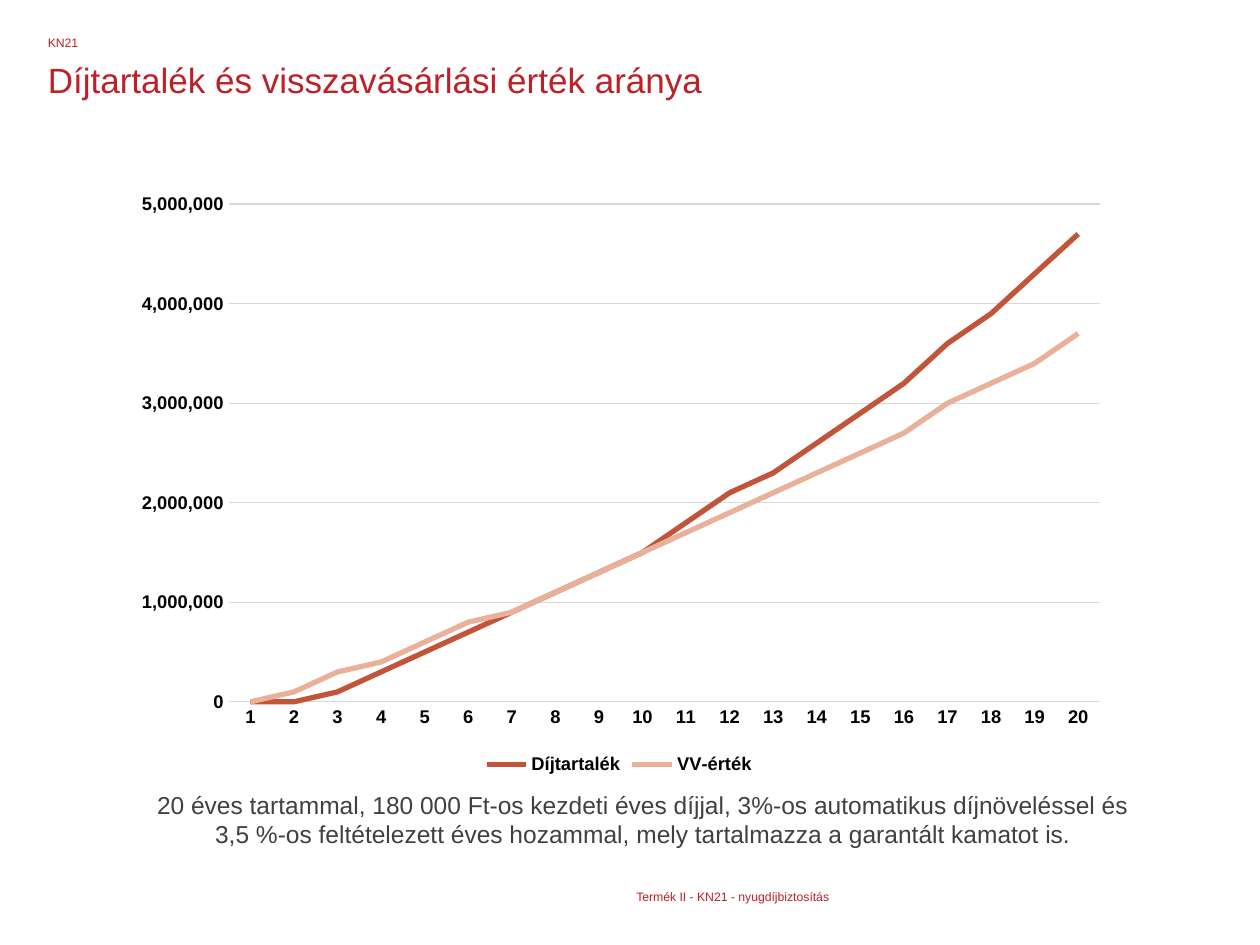
import pptx
import pptx.chart.data
import pptx.dml.color
import pptx.enum.chart
import pptx.enum.text
import pptx.oxml
import pptx.oxml.ns
import pptx.util

WIDTH, HEIGHT = 10, 7.5
MARGIN = 0.38
RED, GREY, BLACK, GRID = "BD2027", "404040", "000000", "D9D9D9"
FONT = "Arial"

# Thousands of forints at the end of each policy year
RESERVE = [0, 0, 100, 300, 500, 700, 900, 1100, 1300, 1500,
           1800, 2100, 2300, 2600, 2900, 3200, 3600, 3900, 4300, 4700]
SURRENDER = [0, 100, 300, 400, 600, 800, 900, 1100, 1300, 1500,
             1700, 1900, 2100, 2300, 2500, 2700, 3000, 3200, 3400, 3700]
SERIES = [("Díjtartalék", RESERVE, "C25439"), ("VV-érték", SURRENDER, "E9B09A")]


def color(hex_code):
    return pptx.dml.color.RGBColor.from_string(hex_code)


def style_font(font, size, hex_code, bold=False):
    font.name = FONT
    font.size = pptx.util.Pt(size)
    font.bold = bold
    font.color.rgb = color(hex_code)


def style_line(line, hex_code, width):
    line.color.rgb = color(hex_code)
    line.width = pptx.util.Pt(width)


def add_text(slide, box, lines, size, hex_code, centered=False,
             spacing=None, inset=(0, 0)):
    """Add a text box with one paragraph per line; spacing is in points."""
    frame = slide.shapes.add_textbox(*map(pptx.util.Inches, box)).text_frame
    frame.word_wrap = True
    frame.margin_left = frame.margin_right = pptx.util.Inches(inset[0])
    frame.margin_top = frame.margin_bottom = pptx.util.Inches(inset[1])
    frame.text = "\n".join(lines)
    for paragraph in frame.paragraphs:
        if centered:
            paragraph.alignment = pptx.enum.text.PP_ALIGN.CENTER
        if spacing:
            paragraph.line_spacing = pptx.util.Pt(spacing)
        for run in paragraph.runs:
            style_font(run.font, size, hex_code)


def fix_plot_area(chart, **shares):
    """Place the inner plot area at x, y, w, h as shares of the chart."""
    plot_area = chart._chartSpace.chart.plotArea
    for old in plot_area.findall(pptx.oxml.ns.qn("c:layout")):
        plot_area.remove(old)
    sizes = "".join(f'<c:{key} val="{share}"/>' for key, share in shares.items())
    plot_area.insert(0, pptx.oxml.parse_xml(
        f'<c:layout {pptx.oxml.ns.nsdecls("c")}><c:manualLayout>'
        '<c:layoutTarget val="inner"/><c:xMode val="edge"/><c:yMode val="edge"/>'
        f'{sizes}</c:manualLayout></c:layout>'))


def style_axes(chart):
    years, amounts = chart.category_axis, chart.value_axis
    for axis in (years, amounts):
        axis.major_tick_mark = pptx.enum.chart.XL_TICK_MARK.NONE
        axis.minor_tick_mark = pptx.enum.chart.XL_TICK_MARK.NONE
        style_font(axis.tick_labels.font, 10.5, BLACK, bold=True)
    style_line(years.format.line, GRID, 0.75)
    amounts.minimum_scale, amounts.maximum_scale = 0, 5_000_000
    amounts.major_unit = 1_000_000
    amounts.tick_labels.number_format = "#,##0"
    amounts.tick_labels.number_format_is_linked = False
    amounts.format.line.fill.background()
    style_line(amounts.major_gridlines.format.line, GRID, 0.75)


def add_value_chart(slide, box):
    data = pptx.chart.data.CategoryChartData(number_format="#,##0")
    data.categories = [str(year) for year in range(1, len(RESERVE) + 1)]
    for name, thousands, _ in SERIES:
        data.add_series(name, [amount * 1000 for amount in thousands])
    chart = slide.shapes.add_chart(
        pptx.enum.chart.XL_CHART_TYPE.LINE,
        *map(pptx.util.Inches, box), data).chart
    chart.has_title = False
    style_font(chart.font, 10, BLACK, bold=True)
    chart.has_legend = True
    chart.legend.position = pptx.enum.chart.XL_LEGEND_POSITION.BOTTOM
    chart.legend.include_in_layout = False
    style_font(chart.legend.font, 10.5, BLACK, bold=True)
    style_axes(chart)
    chart.plots[0].vary_by_categories = False
    for series, (_, _, hex_code) in zip(chart.plots[0].series, SERIES):
        series.smooth = False
        series.marker.style = pptx.enum.chart.XL_MARKER_STYLE.NONE
        style_line(series.format.line, hex_code, 3)
    fix_plot_area(chart, x=0.11, y=0.04, w=0.87, h=0.83)


def main():
    deck = pptx.Presentation()
    deck.slide_width = pptx.util.Inches(WIDTH)
    deck.slide_height = pptx.util.Inches(HEIGHT)
    slide = deck.slides.add_slide(deck.slide_layouts[6])

    add_text(slide, (5.05, 7.06, 3.17, 0.12),
             ["Termék II - KN21 - nyugdíjbiztosítás"], 7, RED)
    add_text(slide, (MARGIN, 0.49, 9.17, 0.61),
             ["Díjtartalék és visszavásárlási érték aránya"], 20, RED, spacing=22)
    add_text(slide, (MARGIN, 0.3, 2.43, 0.13), ["KN21"], 7, RED, spacing=7)
    add_value_chart(slide, (0.94, 1.43, 7.95, 4.76))
    add_text(slide, (0.24, 6.22, 9.73, 0.57),
             ["20 éves tartammal, 180 000 Ft-os kezdeti éves díjjal, "
              "3%-os automatikus díjnöveléssel és",
              "3,5 %-os feltételezett éves hozammal, "
              "mely tartalmazza a garantált kamatot is."],
             14, GREY, centered=True, inset=(0.1, 0.05))
    deck.save("out.pptx")


if __name__ == "__main__":
    main()
